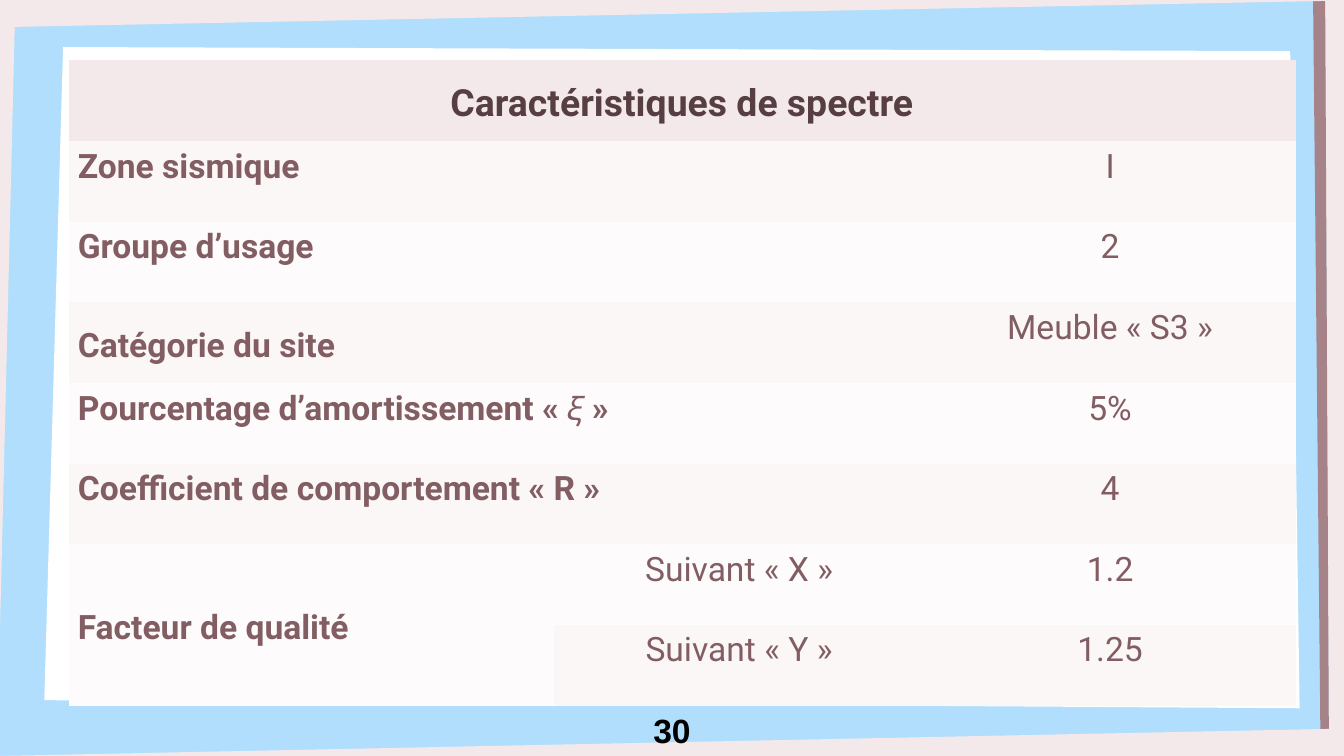
import dataclasses

import pptx
import pptx.dml.color
import pptx.enum.text
import pptx.util

EMU_PER_PX = 4572  # 200 px to the inch
NO_STYLE_NO_GRID = "{2D5ABB26-0587-4C30-8999-92F81FD0307C}"
ALIGN = pptx.enum.text.PP_ALIGN
ANCHOR = pptx.enum.text.MSO_ANCHOR


def px(length):
    return pptx.util.Emu(length * EMU_PER_PX)


def rgb(code):
    return pptx.dml.color.RGBColor.from_string(code)


@dataclasses.dataclass(frozen=True)
class Theme:
    background: str = "B1DEFC"
    paper: str = "FFFFFF"
    blush: str = "F4E9EA"
    mauve: str = "A68388"
    heading: str = "563E42"
    body: str = "825D62"
    number: str = "000000"
    bands: tuple = ("FDFBFB", "FBF7F7")
    font: str = "Roboto"
    number_font: str = "Arial"
    heading_size: int = 20
    body_size: int = 18


class SlideBuilder:
    def __init__(self, slide, theme):
        self.slide = slide
        self.theme = theme
        slide.background.fill.solid()
        slide.background.fill.fore_color.rgb = rgb(theme.background)

    def polygon(self, points, color):
        corners = [(px(x), px(y)) for x, y in points]
        builder = self.slide.shapes.build_freeform(*corners[0])
        builder.add_line_segments(corners[1:], close=True)
        shape = builder.convert_to_shape()
        shape.shadow.inherit = False
        shape.fill.solid()
        shape.fill.fore_color.rgb = rgb(color)
        shape.line.fill.background()

    def format_text(self, text_frame, align, size, color, bold, font):
        paragraph = text_frame.paragraphs[0]
        paragraph.alignment = align
        for run in paragraph.runs:
            run.font.name = font
            run.font.size = pptx.util.Pt(size)
            run.font.bold = bold
            run.font.color.rgb = rgb(color)

    def text(self, left, top, width, height, text):
        text_frame = self.slide.shapes.add_textbox(
            px(left), px(top), px(width), px(height)).text_frame
        text_frame.word_wrap = True
        text_frame.text = text
        self.format_text(text_frame, ALIGN.CENTER, self.theme.body_size,
                         self.theme.number, True, self.theme.number_font)

    def table(self, left, top, column_widths, row_height, row_count):
        """Add an unstyled table with banded cell fills and a tinted first row."""
        frame = self.slide.shapes.add_table(
            row_count, len(column_widths), px(left), px(top),
            px(sum(column_widths)), px(row_height * row_count))
        frame.element.xpath(".//a:tableStyleId")[0].text = NO_STYLE_NO_GRID
        table = frame.table
        for column, width in zip(table.columns, column_widths):
            column.width = px(width)
        for index, row in enumerate(table.rows):
            row.height = px(row_height)
            color = self.theme.bands[index % 2] if index else self.theme.blush
            for cell in row.cells:
                cell.fill.solid()
                cell.fill.fore_color.rgb = rgb(color)
        return table

    def cell(self, cell, text, label=False, heading=False, middle=False):
        """Fill a cell; labels are bold and left-aligned, the rest centred."""
        cell.margin_left = cell.margin_right = px(14)
        cell.margin_top = cell.margin_bottom = 0
        cell.vertical_anchor = ANCHOR.MIDDLE if middle else ANCHOR.TOP
        cell.text_frame.text = text
        paragraph = cell.text_frame.paragraphs[0]
        paragraph.line_spacing = 1.15
        if label:
            paragraph.space_after = pptx.util.Pt(10)
        theme = self.theme
        self.format_text(
            cell.text_frame, ALIGN.LEFT if label else ALIGN.CENTER,
            theme.heading_size if heading else theme.body_size,
            theme.heading if heading else theme.body,
            label or heading, theme.font)


CHARACTERISTICS = [
    ("Zone sismique", "I"),
    ("Groupe d’usage", "2"),
    ("Catégorie du site", "Meuble « S3 »"),
    ("Pourcentage d’amortissement « 𝜉 »", "5%"),
    ("Coefficient de comportement « R »", "4"),
]
QUALITY_FACTORS = [("Suivant « X »", "1.2"), ("Suivant « Y »", "1.25")]


def add_frame(builder):
    theme = builder.theme
    builder.polygon([(66, 1042), (1934, 1054), (1920, 76), (94, 70)], theme.paper)
    builder.polygon([(2024, 0), (2018, 1232), (1978, 1210), (1972, 0)], theme.blush)
    builder.polygon([(1972, 0), (1978, 1210), (1966, 1204), (1954, 0)], theme.mauve)
    builder.polygon([(0, 0), (0, 938), (22, 40), (2040, 0)], theme.blush)
    builder.polygon([(2040, 1125), (2040, 186), (2018, 1084), (0, 1125)], theme.blush)


def add_spectrum_table(builder):
    first_factor_row = 1 + len(CHARACTERISTICS)
    row_count = first_factor_row + len(QUALITY_FACTORS)
    table = builder.table(102, 90, [722, 552, 552], 120, row_count)

    table.cell(0, 0).merge(table.cell(0, 2))
    builder.cell(table.cell(0, 0), "Caractéristiques de spectre",
                 heading=True, middle=True)
    for row, (label, value) in enumerate(CHARACTERISTICS, start=1):
        table.cell(row, 0).merge(table.cell(row, 1))
        builder.cell(table.cell(row, 0), label, label=True,
                     middle=label == "Catégorie du site")
        builder.cell(table.cell(row, 2), value)

    table.cell(first_factor_row, 0).merge(table.cell(row_count - 1, 0))
    builder.cell(table.cell(first_factor_row, 0), "Facteur de qualité",
                 label=True, middle=True)
    for row, (direction, value) in enumerate(QUALITY_FACTORS, start=first_factor_row):
        builder.cell(table.cell(row, 1), direction)
        builder.cell(table.cell(row, 2), value)


def main():
    presentation = pptx.Presentation()
    presentation.slide_width = px(2000)
    presentation.slide_height = px(1125)
    blank_layout = presentation.slide_layouts[6]
    builder = SlideBuilder(presentation.slides.add_slide(blank_layout), Theme())
    add_frame(builder)
    add_spectrum_table(builder)
    builder.text(916, 1046, 168, 80, "30")
    presentation.save("out.pptx")


if __name__ == "__main__":
    main()
